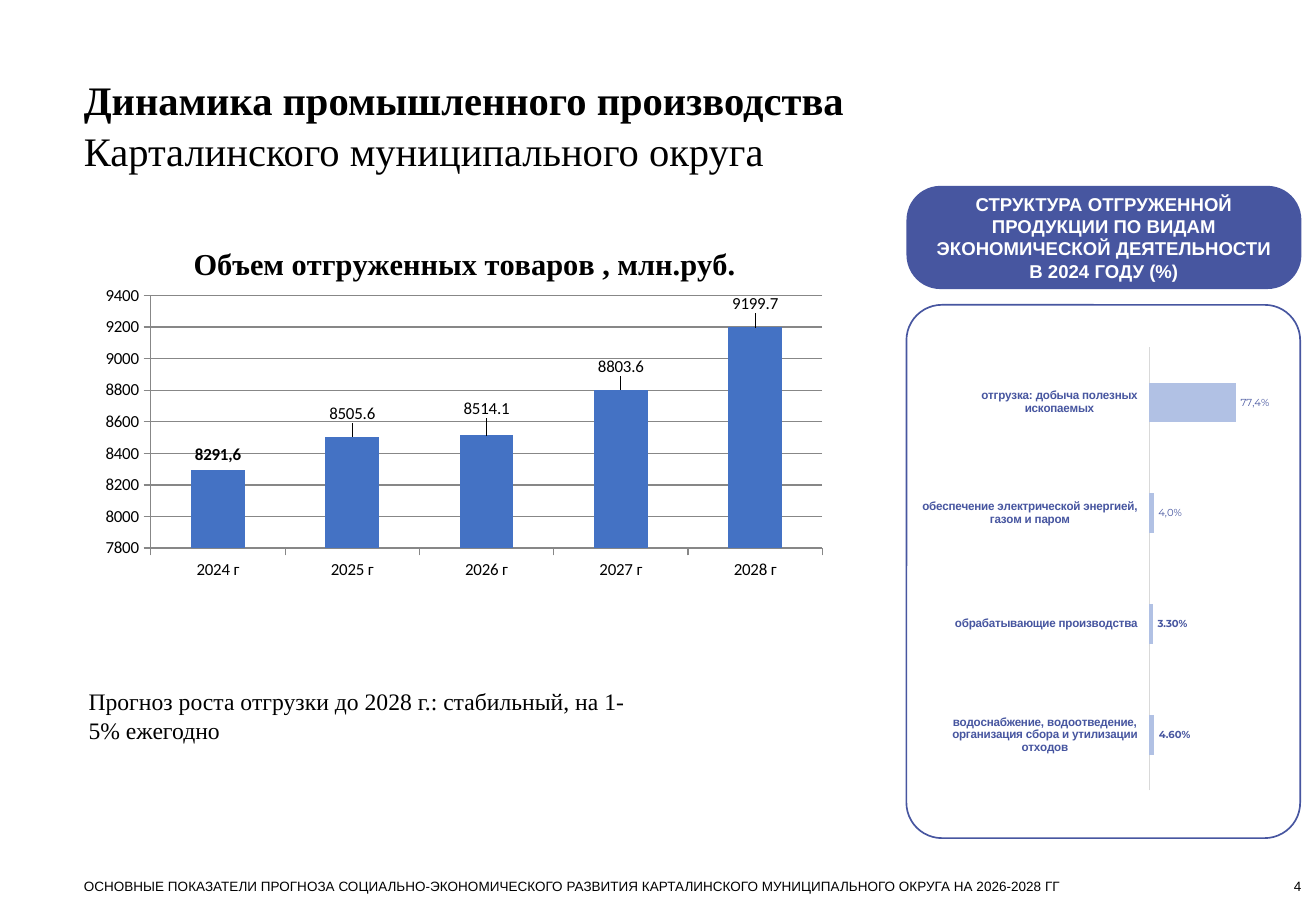
"""Build the slide on industrial output of the Kartaly municipal district."""
from dataclasses import dataclass
from typing import Any

from lxml.etree import SubElement
from pptx import Presentation
from pptx.chart.data import CategoryChartData
from pptx.dml.color import RGBColor
from pptx.enum.chart import XL_CHART_TYPE as ChartType
from pptx.enum.chart import XL_LABEL_POSITION as LabelPosition
from pptx.enum.chart import XL_TICK_LABEL_POSITION as TickLabelPosition
from pptx.enum.chart import XL_TICK_MARK as TickMark
from pptx.enum.shapes import MSO_SHAPE as ShapeType
from pptx.enum.text import MSO_ANCHOR as Anchor
from pptx.enum.text import PP_ALIGN as Align
from pptx.oxml.ns import qn
from pptx.util import Emu, Pt

EMU_PER_PX = 9144
BLACK = RGBColor(0x00, 0x00, 0x00)
WHITE = RGBColor(0xFF, 0xFF, 0xFF)
INDIGO = RGBColor(0x47, 0x56, 0xA0)
PALE_BLUE = RGBColor(0xB1, 0xC1, 0xE4)
BLUE = RGBColor(0x44, 0x72, 0xC4)
LIGHT_GRAY = RGBColor(0xD9, 0xD9, 0xD9)
GRAY = RGBColor(0x87, 0x87, 0x87)
SERIF, SANS = "Times New Roman", "Arial"
VOLUME_TITLE = "Объем отгруженных товаров , млн.руб."


@dataclass(frozen=True)
class Box:
    left: int
    top: int
    width: int
    height: int

    def emu(self) -> tuple[Emu, ...]:
        return tuple(Emu(n * EMU_PER_PX) for n in (self.left, self.top, self.width, self.height))


@dataclass(frozen=True)
class Style:
    name: str
    size: int
    color: RGBColor = BLACK
    bold: bool = False


@dataclass(frozen=True)
class Line:
    text: str
    style: Style


@dataclass(frozen=True)
class TextBlock:
    box: Box
    lines: tuple[Line, ...]
    frame: dict[str, Any]
    paragraph: dict[str, Any]


@dataclass(frozen=True)
class Panel:
    box: Box
    radius: float
    fill: RGBColor | None = None
    lines: tuple[Line, ...] = ()


@dataclass(frozen=True)
class ChartSpec:
    box: Box
    kind: ChartType
    series: str
    values: dict[str, float]
    color: RGBColor
    plot_area: tuple[float, ...]
    plot: dict[str, Any]
    category_axis: dict[str, Any]
    value_axis: dict[str, Any]
    labels: dict[str, Any]
    label_style: Style
    category_style: Style
    category_line: RGBColor
    custom: dict[int, Line]
    offsets: tuple[float, ...] = ()
    title: Line | None = None


FLUSH = {"margin_left": 0, "margin_right": 0, "margin_top": 0, "margin_bottom": 0}
FOOTER = Style(SANS, 8)
TEXTS = (
    TextBlock(Box(991, 723, 80, 13), (Line("4", FOOTER),),
              FLUSH | {"vertical_anchor": Anchor.BOTTOM}, {"alignment": Align.RIGHT}),
    TextBlock(Box(69, 60, 965, 81),
              (Line("Динамика промышленного производства", Style(SERIF, 24, bold=True)),
               Line("Карталинского муниципального округа", Style(SERIF, 24))),
              FLUSH, {"line_spacing": 1.05}),
    TextBlock(Box(69, 723, 840, 13),
              (Line("ОСНОВНЫЕ ПОКАЗАТЕЛИ ПРОГНОЗА СОЦИАЛЬНО-ЭКОНОМИЧЕСКОГО РАЗВИТИЯ "
                    "КАРТАЛИНСКОГО МУНИЦИПАЛЬНОГО ОКРУГА НА 2026-2028 ГГ", FOOTER),), FLUSH, {}),
    TextBlock(Box(63, 561, 482, 57),
              (Line("Прогноз роста отгрузки до 2028 г.: стабильный, на 1-5% ежегодно",
                    Style(SERIF, 14)),), {}, {}),
)
PANELS = (
    Panel(Box(746, 153, 325, 85), 0.33, INDIGO,
          (Line("СТРУКТУРА ОТГРУЖЕННОЙ ПРОДУКЦИИ ПО ВИДАМ ЭКОНОМИЧЕСКОЙ ДЕЯТЕЛЬНОСТИ "
                "В 2024 ГОДУ (%)", Style(SANS, 11, WHITE, True)),)),
    Panel(Box(746, 251, 324, 439), 0.09),
)
SHARE_LABEL = Style("Montserrat", 6, INDIGO)
AXIS_TEXT = Style("Calibri", 10)
CHARTS = (
    ChartSpec(
        Box(759, 246, 324, 440), ChartType.BAR_CLUSTERED, "Доля отгрузки",
        {"водоснабжение, водоотведение, организация сбора и утилизации отходов": 0.046,
         "обрабатывающие производства": 0.033,
         "обеспечение электрической энергией, газом и паром": 0.04,
         "отгрузка: добыча полезных ископаемых": 0.774},
        PALE_BLUE, (0.57, 0.09, 0.26, 0.83), {"gap_width": 182},
        {"major_tick_mark": TickMark.NONE},
        {"visible": False, "has_major_gridlines": False, "minimum_scale": 0, "maximum_scale": 0.9},
        {"show_value": True, "position": LabelPosition.OUTSIDE_END,
         "number_format": "0.00%", "number_format_is_linked": False},
        Style("Montserrat", 6, INDIGO, True), Style(SANS, 7, INDIGO, True), LIGHT_GRAY,
        {2: Line("4,0%", SHARE_LABEL), 3: Line("77,4%", SHARE_LABEL)}),
    ChartSpec(
        Box(75, 179, 614, 306), ChartType.COLUMN_STACKED, VOLUME_TITLE,
        {"2024 г": 8291.6, "2025 г": 8505.6, "2026 г": 8514.1, "2027 г": 8803.6, "2028 г": 9199.7},
        BLUE, (0.08, 0.21, 0.9, 0.68), {"gap_width": 150, "overlap": 100},
        {"major_tick_mark": TickMark.OUTSIDE},
        {"minimum_scale": 7800, "maximum_scale": 9400, "major_unit": 200,
         "major_tick_mark": TickMark.OUTSIDE, "has_major_gridlines": True},
        {"show_value": True, "position": LabelPosition.INSIDE_END},
        AXIS_TEXT, AXIS_TEXT, GRAY, {0: Line("8291,6", Style("Calibri", 10, bold=True))},
        (-0.08, -0.1, -0.11, -0.1, -0.1), Line(VOLUME_TITLE, Style(SERIF, 18, bold=True))),
)


def apply(target: Any, values: dict[str, Any]) -> None:
    for name, value in values.items():
        setattr(target, name, value)


def apply_style(font: Any, style: Style) -> None:
    apply(font, {"name": style.name, "size": Pt(style.size), "bold": style.bold})
    font.color.rgb = style.color


def write_lines(frame: Any, lines: tuple[Line, ...], values: dict[str, Any]) -> None:
    for index, line in enumerate(lines):
        paragraph = frame.add_paragraph() if index else frame.paragraphs[0]
        apply(paragraph, values)
        run = paragraph.add_run()
        run.text = line.text
        apply_style(run.font, line.style)


def draw_text(shapes: Any, block: TextBlock) -> None:
    frame = shapes.add_textbox(*block.box.emu()).text_frame
    apply(frame, {"word_wrap": True} | block.frame)
    write_lines(frame, block.lines, block.paragraph)


def draw_panel(shapes: Any, panel: Panel) -> None:
    shape = shapes.add_shape(ShapeType.ROUNDED_RECTANGLE, *panel.box.emu())
    shape.shadow.inherit = False
    shape.adjustments[0] = panel.radius
    if panel.fill is None:
        shape.fill.background()
        shape.line.color.rgb = INDIGO
        shape.line.width = Pt(1)
    else:
        shape.fill.solid()
        shape.fill.fore_color.rgb = panel.fill
        shape.line.fill.background()
    apply(shape.text_frame, {"word_wrap": True, "vertical_anchor": Anchor.MIDDLE})
    write_lines(shape.text_frame, panel.lines, {"alignment": Align.CENTER})


def set_layout(parent: Any, position: int, values: dict[str, Any]) -> None:
    for old in parent.findall(qn("c:layout")):
        parent.remove(old)
    layout = SubElement(parent, qn("c:layout"))
    manual = SubElement(layout, qn("c:manualLayout"))
    for name, value in values.items():
        SubElement(manual, qn(f"c:{name}")).set("val", str(value))
    parent.insert(position, layout)


def draw_chart(shapes: Any, spec: ChartSpec) -> None:
    data = CategoryChartData()
    data.categories = list(spec.values)
    data.add_series(spec.series, list(spec.values.values()))
    chart = shapes.add_chart(spec.kind, *spec.box.emu(), data).chart
    apply(chart, {"has_legend": False, "has_title": spec.title is not None})
    apply_style(chart.font, AXIS_TEXT)
    if spec.title:
        write_lines(chart.chart_title.text_frame, (spec.title,), {})
        set_layout(chart.chart_title._element, 1,
                   {"xMode": "edge", "yMode": "edge", "x": 0.13, "y": 0.06})
    edges = {"layoutTarget": "inner", "xMode": "edge", "yMode": "edge"}
    plot_area = chart._chartSpace.chart.plotArea
    set_layout(plot_area, 0, edges | dict(zip("xywh", spec.plot_area)))

    plot = chart.plots[0]
    apply(plot, spec.plot | {"vary_by_categories": False, "has_data_labels": True})
    apply(plot.data_labels, spec.labels)
    apply_style(plot.data_labels.font, spec.label_style)
    apply(chart.category_axis, spec.category_axis | {"tick_label_position": TickLabelPosition.LOW})
    apply(chart.value_axis, spec.value_axis)
    apply_style(chart.category_axis.tick_labels.font, spec.category_style)
    lines = [chart.category_axis.format.line]
    if chart.value_axis.has_major_gridlines:
        lines += [chart.value_axis.format.line, chart.value_axis.major_gridlines.format.line]
    for line in lines:
        line.color.rgb = spec.category_line
        line.width = Pt(0.75)

    series = plot.series[0]
    series.format.fill.solid()
    series.format.fill.fore_color.rgb = spec.color
    apply(series.data_labels, spec.labels)
    apply_style(series.data_labels.font, spec.label_style)
    for index, line in spec.custom.items():
        label = series.points[index].data_label
        write_lines(label.text_frame, (line,), {})
        label.position = spec.labels["position"]
    for index, offset in enumerate(spec.offsets):
        label = series.points[index].data_label
        label.position = spec.labels["position"]
        set_layout(label._dLbl, 1, {"x": 0, "y": offset})


def main() -> None:
    presentation = Presentation()
    apply(presentation, {"slide_width": Emu(1083 * EMU_PER_PX),
                         "slide_height": Emu(750 * EMU_PER_PX)})
    shapes = presentation.slides.add_slide(presentation.slide_layouts[6]).shapes
    for items, draw in ((PANELS, draw_panel), (CHARTS, draw_chart), (TEXTS, draw_text)):
        for item in items:
            draw(shapes, item)
    presentation.save("out.pptx")


if __name__ == "__main__":
    main()
